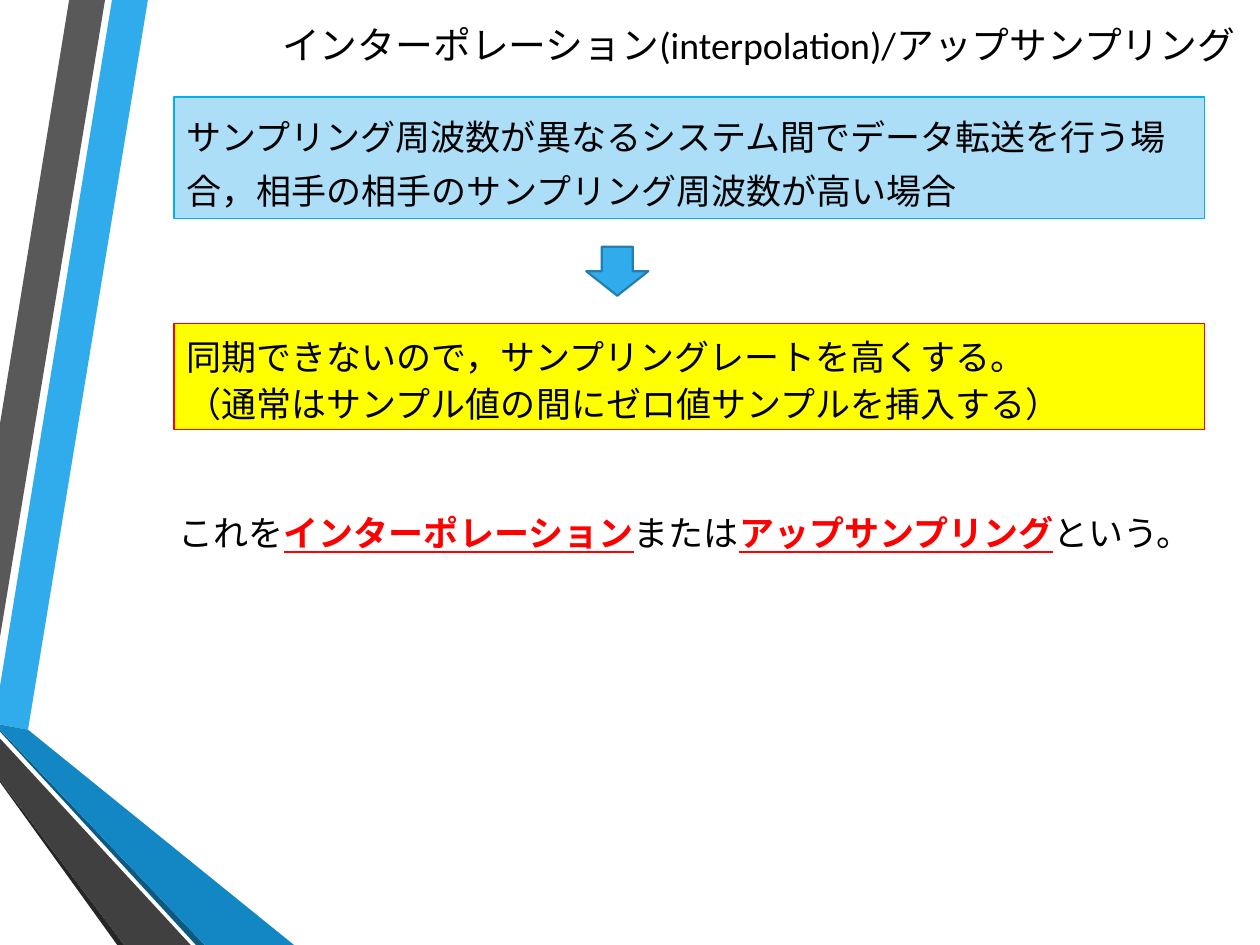
import pptx
import pptx.util
import pptx.dml.color
import pptx.enum.dml
import pptx.enum.lang
import pptx.enum.shapes
import pptx.enum.text

Pt = pptx.util.Pt
ALIGN = pptx.enum.text.PP_ALIGN
ANCHOR = pptx.enum.text.MSO_ANCHOR
SHAPE = pptx.enum.shapes.MSO_SHAPE

THEME = {
    "text": "000000", "key": "FF0000",
    "sky": "30ACEC", "sky_edge": "247FAF", "ocean": "1287C3", "deep": "0C5A82",
    "gray": "595959", "dark": "404040", "darker": "262626",
    "problem": "ACDEF7", "problem_edge": "00B0F0",
    "answer": "FFFF00", "answer_edge": "FF0000",
    "title_font": "Calibri", "body_font": "Times New Roman",
    "title_size": 21.6, "body_size": 20,
}

# Ribbons on the left edge: fill and corner points
RIBBONS = [
    ("sky", [(0, 392), (0, 414), (16, 417), (84.5, 0), (64, 0)]),
    ("gray", [(60, 0), (39.5, 0), (0, 242), (0, 364)]),
    ("darker", [(0, 446), (0, 447), (67, 540), (71, 540)]),
    ("deep", [(0, 417), (0, 418), (112, 540), (117, 540)]),
    ("ocean", [(0, 417), (117, 540), (168, 540), (16, 417), (0, 414)]),
    ("dark", [(0, 446), (71, 540), (109, 540), (0, 422)]),
]

# Paragraphs are lists of (text, is key term)
TITLE = [[("インターポレーション(interpolation)/アップサンプリング", False)]]
PROBLEM = [[("サンプリング周波数が異なるシステム間でデータ転送を行う場合，"
             "相手の相手のサンプリング周波数が高い場合", False)]]
ANSWER = [
    [("同期できないので，サンプリングレートを高くする。", False)],
    [("（通常はサンプル値の間にゼロ値サンプルを挿入する）", False)],
]
CONCLUSION = [[
    ("これを", False), ("インターポレーション", True), ("または", False),
    ("アップサンプリング", True), ("という。", False),
]]

BOX_LEFT, BOX_WIDTH = 99.5, 589


def color(name):
    return pptx.dml.color.RGBColor.from_string(THEME[name])


def paint(sp, fill, edge=None, weight=0.75):
    sp.shadow.inherit = False
    sp.fill.solid()
    sp.fill.fore_color.rgb = color(fill)
    if edge:
        sp.line.color.rgb = color(edge)
        sp.line.width = Pt(weight)
    else:
        sp.line.fill.background()


def add_ribbon(slide, fill, points):
    start, *rest = [(Pt(x), Pt(y)) for x, y in points]
    builder = slide.shapes.build_freeform(*start)
    builder.add_line_segments(rest, close=True)
    paint(builder.convert_to_shape(), fill)


def add_shape(slide, kind, left, top, width, height, **style):
    sp = slide.shapes.add_shape(kind, Pt(left), Pt(top), Pt(width), Pt(height))
    paint(sp, **style)
    return sp


def add_textbox(slide, left, top, width, height):
    return slide.shapes.add_textbox(Pt(left), Pt(top), Pt(width), Pt(height))


def write(sp, paragraphs, font="body_font", size="body_size",
          align=ALIGN.LEFT, anchor=ANCHOR.TOP, spacing=None):
    """Fill a shape with text; key terms are red, bold and underlined."""
    tf = sp.text_frame
    tf.word_wrap = True
    tf.vertical_anchor = anchor
    for i, runs in enumerate(paragraphs):
        p = tf.add_paragraph() if i else tf.paragraphs[0]
        p.alignment = align
        if spacing:
            p.line_spacing = Pt(spacing)
        for text, is_key in runs:
            r = p.add_run()
            r.text = text
            r.font.name = THEME[font]
            r.font.size = Pt(THEME[size])
            r.font.language_id = pptx.enum.lang.MSO_LANGUAGE_ID.JAPANESE
            r.font.color.rgb = color("key" if is_key else "text")
            r.font.bold = r.font.underline = is_key


def main():
    prs = pptx.Presentation()
    prs.slide_width, prs.slide_height = Pt(720), Pt(540)
    slide = prs.slides.add_slide(prs.slide_layouts[6])

    for fill, points in RIBBONS:
        add_ribbon(slide, fill, points)

    title = add_textbox(slide, 106, 1.5, 607, 48)
    write(title, TITLE, font="title_font", size="title_size",
          align=ALIGN.RIGHT, anchor=ANCHOR.MIDDLE)

    problem = add_shape(slide, SHAPE.RECTANGLE, BOX_LEFT, 55.5, BOX_WIDTH, 69.5,
                        fill="problem", edge="problem_edge")
    write(problem, PROBLEM, spacing=31)

    answer = add_shape(slide, SHAPE.RECTANGLE, BOX_LEFT, 185, BOX_WIDTH, 60.5,
                       fill="answer", edge="answer_edge")
    write(answer, ANSWER, spacing=27)

    add_shape(slide, SHAPE.DOWN_ARROW, 335, 141, 35.5, 28,
              fill="sky", edge="sky_edge", weight=1.25)

    conclusion = add_textbox(slide, 95, 286, 628.5, 38)
    write(conclusion, CONCLUSION, spacing=27)

    prs.save("out.pptx")


if __name__ == "__main__":
    main()
